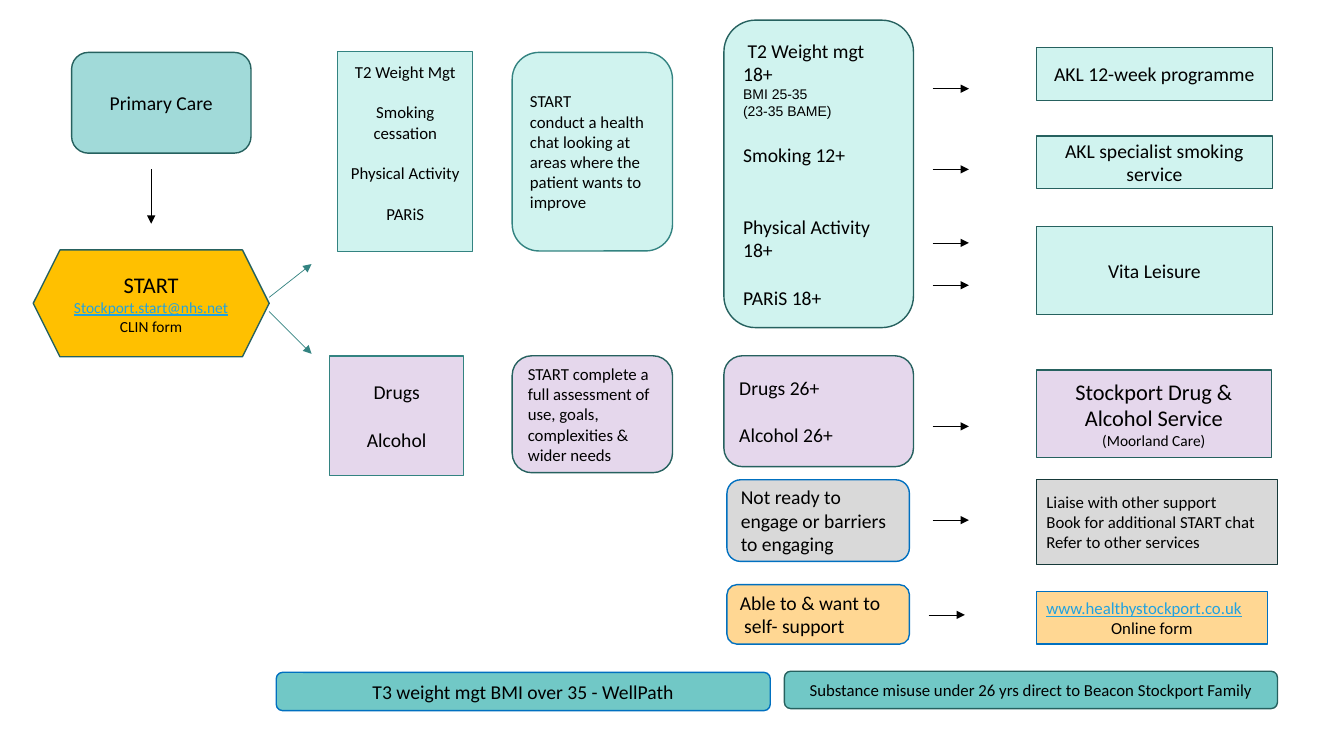
from lxml import etree
from pptx import Presentation
from pptx import util as u
from pptx.dml.color import RGBColor
from pptx.enum import shapes, text
from pptx.oxml import ns

MINT, LILAC, GREY, SAND, TEAL = "D0F3EF", "E5D7EC", "D9D9D9", "FFD793", "71C8C6"
DARK, GREEN, BLUE, BLACK, LINK = "26615F", "338381", "0070C0", "000000", "21A2E0"
RECT = shapes.MSO_SHAPE.RECTANGLE
ROUND = shapes.MSO_SHAPE.ROUNDED_RECTANGLE
HEXAGON = shapes.MSO_SHAPE.HEXAGON
LEFT, CENTER = text.PP_ALIGN.LEFT, text.PP_ALIGN.CENTER
LINE_12, LINE_14 = 14.65, 17.1  # height of one line of text, in points


def color(value):
    return RGBColor.from_string(value)


def write(paragraph, words, size=14, font="Calibri", fill=BLACK, align=CENTER,
          underline=False, before=0):
    """Fill one paragraph with formatted words."""
    paragraph.alignment = align
    paragraph.space_before = u.Pt(before)
    run = paragraph.add_run()
    run.text = words
    run.font.size = u.Pt(size)
    run.font.name = font
    run.font.color.rgb = color(fill)
    run.font.underline = underline


def add_box(slide, kind, place, fill, outline, lines, width=1, top_inset=None,
            **format):
    """Add a shape; each line is a string or a (string, overrides) pair."""
    shape = slide.shapes.add_shape(kind, *map(u.Inches, place))
    shape.shadow.inherit = False
    shape.fill.solid()
    shape.fill.fore_color.rgb = color(fill)
    shape.line.color.rgb = color(outline)
    shape.line.width = u.Pt(width)
    frame = shape.text_frame
    frame.word_wrap = True
    frame.vertical_anchor = text.MSO_ANCHOR.MIDDLE
    if top_inset is not None:
        frame.vertical_anchor = text.MSO_ANCHOR.TOP
        frame.margin_top = u.Inches(top_inset)
    for index, line in enumerate(lines):
        words, overrides = (line, {}) if isinstance(line, str) else line
        paragraph = frame.add_paragraph() if index else frame.paragraphs[0]
        write(paragraph, words, **{**format, **overrides})


def add_arrow(slide, start, end, outline=BLACK):
    arrow = slide.shapes.add_connector(
        shapes.MSO_CONNECTOR.STRAIGHT, *map(u.Inches, (*start, *end)))
    arrow.line.color.rgb = color(outline)
    arrow.line.width = u.Pt(0.5)
    etree.SubElement(arrow.line._get_or_add_ln(), ns.qn("a:tailEnd"), type="triangle")
    etree.SubElement(arrow._element.spPr, ns.qn("a:effectLst"))


def add_referral(slide):
    """Entry point: primary care refers to START."""
    add_box(slide, ROUND, (0.71, 0.52, 1.78, 1), "A1DAD9", DARK, ["Primary Care"])
    add_box(slide, HEXAGON, (0.33, 2.48, 2.34, 1.06), "FFC000", DARK, [
        ("START", {"size": 16}),
        ("Stockport.start@nhs.net", {"fill": LINK, "underline": True}),
        "CLIN form"], size=11)
    add_arrow(slide, (1.5, 1.68), (1.5, 2.22))
    add_arrow(slide, (2.67, 2.95), (3.09, 2.62), GREEN)
    add_arrow(slide, (2.67, 3.09), (3.09, 3.51), GREEN)


def add_start_work(slide):
    """Topics and the chat or assessment that START carries out."""
    gap = {"before": LINE_12}
    add_box(slide, RECT, (3.35, 0.51, 1.34, 1.98), MINT, GREEN, [
        "T2 Weight Mgt", ("Smoking cessation", gap), ("Physical Activity", gap),
        ("PARiS", gap)], width=0.5, top_inset=0.1, size=12)
    add_box(slide, RECT, (3.27, 3.53, 1.33, 1.19), LILAC, GREEN, [
        "Drugs", ("Alcohol", {"before": LINE_14})])
    add_box(slide, ROUND, (5.08, 0.52, 1.59, 1.97), MINT, GREEN, [
        "START",
        "conduct a health chat looking at areas where the patient wants to improve",
    ], size=12, align=LEFT)
    add_box(slide, ROUND, (5.08, 3.53, 1.59, 1.16), LILAC, DARK, [
        "START complete a full assessment of use, goals,",
        "complexities & wider needs"], size=12, align=LEFT)


def add_outcomes(slide):
    """Outcomes of the chat, by eligibility."""
    gap = {"before": LINE_14}
    small = {"size": 10, "font": "Arial"}
    outcomes = [
        ((7.18, 0.2, 1.88, 3.05), MINT, DARK, [
            " T2 Weight mgt 18+", ("BMI 25-35", small), ("(23-35 BAME)", small),
            ("Smoking 12+", gap), ("Physical Activity 18+", {"before": 2 * LINE_14}),
            ("PARiS 18+", gap)]),
        ((7.18, 3.53, 1.88, 1.1), LILAC, DARK, ["Drugs 26+", ("Alcohol 26+", gap)]),
        ((7.21, 4.76, 1.81, 0.81), GREY, BLUE,
         ["Not ready to engage or barriers to engaging"]),
        ((7.21, 5.8, 1.81, 0.59), SAND, BLUE, ["Able to & want to", " self- support"]),
    ]
    for place, fill, outline, lines in outcomes:
        add_box(slide, ROUND, place, fill, outline, lines, align=LEFT)
    for y in (0.88, 1.68, 2.41, 2.83, 4.23, 5.16):
        add_arrow(slide, (9.25, y), (9.61, y))
    add_arrow(slide, (9.21, 6.1), (9.57, 6.1))


def add_services(slide):
    """Services that take the patient on."""
    services = [(0.47, 0.53, "AKL 12-week programme"),
                (1.35, 0.52, "AKL specialist smoking service"),
                (2.25, 0.87, "Vita Leisure")]
    for top, height, name in services:
        add_box(slide, RECT, (10.28, top, 2.34, height), MINT, DARK, [name])
    add_box(slide, RECT, (10.28, 3.67, 2.33, 0.87), LILAC, DARK, [
        "Stockport Drug & Alcohol Service", ("(Moorland Care)", {"size": 11})], size=16)
    add_box(slide, RECT, (10.28, 4.76, 2.39, 0.84), GREY, "163939", [
        "Liaise with other support", "Book for additional START chat",
        "Refer to other services"], size=12, align=LEFT)
    add_box(slide, RECT, (10.28, 5.87, 2.29, 0.52), SAND, BLUE, [
        ("www.healthystockport.co.uk",
         {"fill": LINK, "underline": True, "align": LEFT}),
        "Online form"], size=12)


def add_direct_routes(slide):
    """Groups referred directly elsewhere."""
    add_box(slide, ROUND, (2.74, 6.67, 4.9, 0.38), TEAL, BLUE,
            ["T3 weight mgt BMI over 35 - WellPath"])
    add_box(slide, ROUND, (7.78, 6.66, 4.89, 0.37), TEAL, DARK,
            ["Substance misuse under 26 yrs direct to Beacon Stockport Family"], size=12)


def main():
    presentation = Presentation()
    presentation.slide_width = u.Inches(13.33)
    presentation.slide_height = u.Inches(7.5)
    slide = presentation.slides.add_slide(presentation.slide_layouts[6])
    add_referral(slide)
    add_start_work(slide)
    add_outcomes(slide)
    add_services(slide)
    add_direct_routes(slide)
    presentation.save("out.pptx")


if __name__ == "__main__":
    main()
